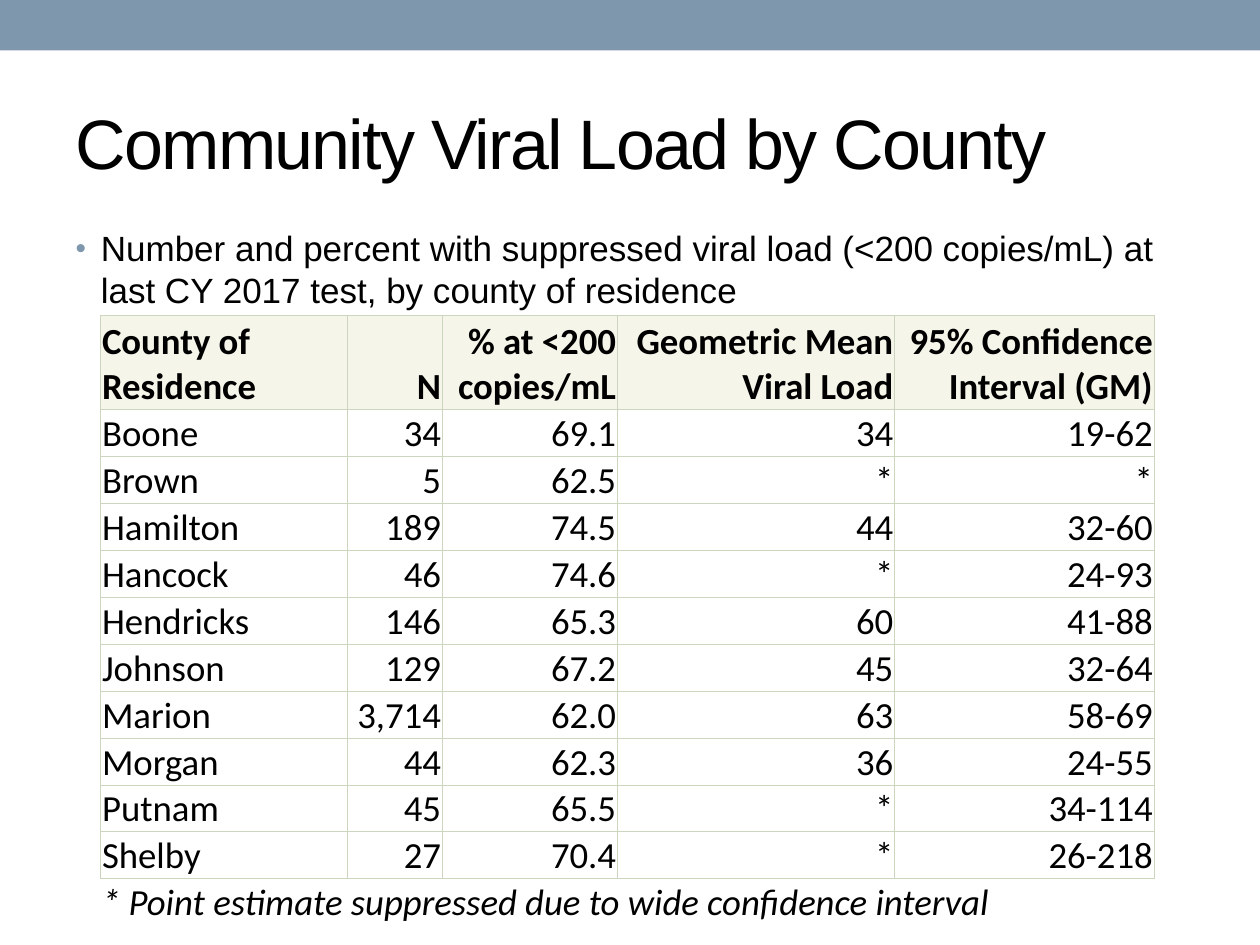
from dataclasses import dataclass

from lxml import etree
from pptx import Presentation
from pptx.dml.color import RGBColor
from pptx.enum.shapes import MSO_SHAPE
from pptx.enum.text import MSO_ANCHOR, MSO_AUTO_SIZE, PP_ALIGN
from pptx.oxml.ns import qn
from pptx.util import Inches, Pt

RECT = MSO_SHAPE.RECTANGLE
LEFT, RIGHT = PP_ALIGN.LEFT, PP_ALIGN.RIGHT
TOP, MIDDLE, BOTTOM = MSO_ANCHOR.TOP, MSO_ANCHOR.MIDDLE, MSO_ANCHOR.BOTTOM
NO_FIT = MSO_AUTO_SIZE.NONE


@dataclass(frozen=True)
class Theme:
    band: str = "7E97AD"
    ink: str = "000000"
    head: str = "F6F5EA"
    rule: str = "CCD6BE"
    font: str = "Arial"
    grid_font: str = "Calibri"
    title: int = 40
    body: int = 20
    grid: int = 21


@dataclass(frozen=True)
class Column:
    label: str
    width: float
    align: PP_ALIGN = RIGHT


THEME = Theme()

COLUMNS = [
    Column("County of Residence", 1.96, LEFT),
    Column("N", 0.75),
    Column("% at <200 copies/mL", 1.39),
    Column("Geometric Mean Viral Load", 2.2),
    Column("95% Confidence Interval (GM)", 2.06),
]

COUNTIES = [
    ("Boone", "34", "69.1", "34", "19-62"),
    ("Brown", "5", "62.5", "*", "*"),
    ("Hamilton", "189", "74.5", "44", "32-60"),
    ("Hancock", "46", "74.6", "*", "24-93"),
    ("Hendricks", "146", "65.3", "60", "41-88"),
    ("Johnson", "129", "67.2", "45", "32-64"),
    ("Marion", "3,714", "62.0", "63", "58-69"),
    ("Morgan", "44", "62.3", "36", "24-55"),
    ("Putnam", "45", "65.5", "*", "34-114"),
    ("Shelby", "27", "70.4", "*", "26-218"),
]
NOTE = "* Point estimate suppressed due to wide confidence interval"


def place(shape, left: float, top: float, width: float, height: float) -> None:
    shape.left, shape.top = Inches(left), Inches(top)
    shape.width, shape.height = Inches(width), Inches(height)


def style(para, face: str, size: int, align: PP_ALIGN = LEFT) -> None:
    para.alignment = align
    para.font.name, para.font.size = face, Pt(size)
    para.font.color.rgb = RGBColor.from_string(THEME.ink)


def fill_holder(shape, text: str, size: int, anchor: MSO_ANCHOR):
    frame = shape.text_frame
    frame.text = text
    frame.auto_size, frame.word_wrap = NO_FIT, True
    frame.vertical_anchor = anchor
    para = frame.paragraphs[0]
    style(para, THEME.font, size)
    return para


def add_bullet(para) -> None:
    props = para._p.get_or_add_pPr()
    props.set("marL", str(Inches(0.2)))
    props.set("indent", str(Inches(-0.2)))
    color = etree.SubElement(props, qn("a:buClr"))
    etree.SubElement(color, qn("a:srgbClr"), val=THEME.band)
    etree.SubElement(props, qn("a:buSzPct"), val="85000")
    etree.SubElement(props, qn("a:buFont"), typeface="Arial")
    etree.SubElement(props, qn("a:buChar"), char="•")


def set_borders(cell, sides: str) -> None:
    props = cell._tc.get_or_add_tcPr()
    for side in "LRTB":
        line = etree.SubElement(props, qn(f"a:ln{side}"), w=str(Pt(0.5)))
        if side in sides:
            fill = etree.SubElement(line, qn("a:solidFill"))
            etree.SubElement(fill, qn("a:srgbClr"), val=THEME.rule)
        else:
            etree.SubElement(line, qn("a:noFill"))


def set_cell(cell, text: str, align: PP_ALIGN, sides: str = "LRTB",
             bold: bool = False, italic: bool = False) -> None:
    cell.text = text
    cell.vertical_anchor = BOTTOM
    cell.margin_left = cell.margin_right = cell.margin_top = Inches(0.01)
    cell.margin_bottom = 0
    para = cell.text_frame.paragraphs[0]
    style(para, THEME.grid_font, THEME.grid, align)
    para.font.bold, para.font.italic = bold, italic
    set_borders(cell, sides)
    if bold:
        cell.fill.solid()
        cell.fill.fore_color.rgb = RGBColor.from_string(THEME.head)
    else:
        cell.fill.background()


def add_grid(slide) -> None:
    count = len(COUNTIES) + 2
    head, total = 0.75, 4.85
    table = slide.shapes.add_table(
        count, len(COLUMNS), Inches(0.8), Inches(2.5),
        Inches(8.35), Inches(total)).table
    table.first_row = table.horz_banding = False
    for index, row in enumerate(table.rows):
        row.height = Inches((total - head) / (count - 1) if index else head)

    # Header and county rows, then the note across the last row
    for c, col in enumerate(COLUMNS):
        table.columns[c].width = Inches(col.width)
        set_cell(table.cell(0, c), col.label, col.align, bold=True)
        for r, county in enumerate(COUNTIES, 1):
            set_cell(table.cell(r, c), county[c], col.align)
        set_cell(table.cell(count - 1, c), "" if c else NOTE, LEFT,
                 sides="T", italic=True)
    table.cell(count - 1, 0).merge(table.cell(count - 1, len(COLUMNS) - 1))


def main() -> None:
    deck = Presentation()
    deck.slide_width, deck.slide_height = Inches(10), Inches(7.5)
    slide = deck.slides.add_slide(deck.slide_layouts[1])
    title, body = slide.shapes.title, slide.placeholders[1]

    # Top band
    band = slide.shapes.add_shape(RECT, 0, 0, deck.slide_width, Inches(0.4))
    band.shadow.inherit = False
    band.fill.solid()
    band.fill.fore_color.rgb = RGBColor.from_string(THEME.band)
    band.line.fill.background()

    # Title, with tight letter spacing
    place(title, 0.5, 0.58, 9, 1.08)
    para = fill_holder(title, "Community Viral Load by County",
                       THEME.title, MIDDLE)
    para.runs[0].font._element.set("spc", "-100")

    # Lead bullet
    place(body, 0.5, 1.75, 9, 1.17)
    para = fill_holder(
        body, "Number and percent with suppressed viral load (<200 copies/mL) "
        "at last CY 2017 test, by county of residence", THEME.body, TOP)
    para.space_before = para.space_after = Pt(3)
    add_bullet(para)

    add_grid(slide)
    deck.save("out.pptx")


if __name__ == "__main__":
    main()
